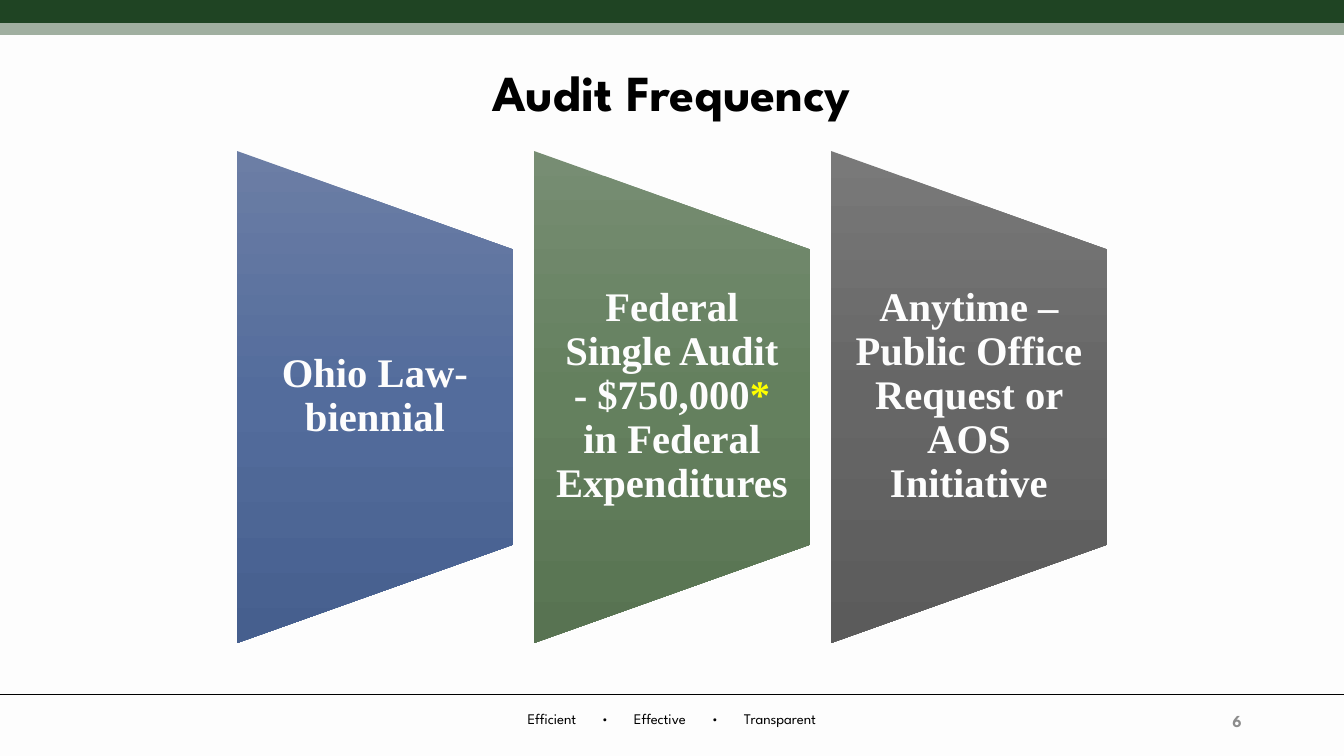
from dataclasses import dataclass

from lxml import etree
from pptx import Presentation
from pptx import util as u
from pptx.dml.color import RGBColor
from pptx.enum import shapes, text
from pptx.oxml import ns

EMU_PER_PX = 914400 / 100.8
W, H = 1344, 756
SANS, SERIF = "League Spartan", "Times New Roman"
BLACK, WHITE, YELLOW, GREY = "000000", "FDFDFD", "FFFF00", "8C8C8C"
FOOTER_TABS = (552, 605, 660, 715, 780)
PANEL_LEFT, PANEL_TOP, PANEL_W, PANEL_H, PANEL_STEP = 237, 151, 276, 492, 297
LABEL_TOP, LABEL_H, LABEL_INSET = 249, 295, 20


@dataclass(frozen=True)
class Run:
    words: str
    color: str = WHITE


@dataclass(frozen=True)
class Panel:
    stops: tuple[str, str, str]
    runs: tuple[Run, ...]


@dataclass(frozen=True)
class Rule:
    y: int
    color: str
    width: float


RULES = (
    Rule(10, "1F4423", 18),
    Rule(29, "A0AFA0", 9),
    Rule(694, BLACK, 0.5),
)
PANELS = (
    Panel(("6C7EA5", "536C9C", "465F8E"), (Run("Ohio Law- biennial"),)),
    Panel(
        ("778D73", "64805E", "587352"),
        (
            Run("Federal Single Audit - $750,000"),
            Run("*", YELLOW),
            Run(" in Federal Expenditures"),
        ),
    ),
    Panel(
        ("797979", "666666", "5B5B5B"),
        (Run("Anytime – Public Office Request or AOS Initiative"),),
    ),
)


def px(n: float) -> int:
    return round(n * EMU_PER_PX)


def rgb(color: str) -> RGBColor:
    return RGBColor.from_string(color)


def box(x: int, y: int, w: int, h: int) -> tuple[int, int, int, int]:
    return px(x), px(y), px(w), px(h)


def add_run(p, run: Run, size: float, font: str, bold: bool = True) -> None:
    r = p.add_run()
    r.text = run.words
    r.font.size, r.font.name, r.font.bold = u.Pt(size), font, bold
    r.font.color.rgb = rgb(run.color)


def set_frame(tf, inset: int, anchor) -> None:
    tf.word_wrap = True
    tf.auto_size = text.MSO_AUTO_SIZE.NONE
    tf.vertical_anchor = anchor
    tf.margin_left = tf.margin_right = px(inset)
    tf.margin_top = tf.margin_bottom = 0


def add_text(s, at: tuple[int, int, int, int], align, inset: int = 0):
    tf = s.shapes.add_textbox(*box(*at)).text_frame
    set_frame(tf, inset, text.MSO_ANCHOR.MIDDLE)
    p = tf.paragraphs[0]
    p.alignment = align
    return p


def add_rule(s, rule: Rule) -> None:
    y = px(rule.y)
    cx = s.shapes.add_connector(shapes.MSO_CONNECTOR.STRAIGHT, 0, y, px(W), y)
    cx.line.color.rgb = rgb(rule.color)
    cx.line.width = u.Pt(rule.width)
    etree.SubElement(cx._element.spPr, ns.qn("a:effectLst"))


def fill_gradient(sp, stops: tuple[str, str, str]) -> None:
    sp.fill.gradient()
    grad = sp._element.spPr.find(ns.qn("a:gradFill"))
    grad.set("rotWithShape", "0")
    for child in list(grad):
        grad.remove(child)
    gs_list = etree.SubElement(grad, ns.qn("a:gsLst"))
    for i, color in enumerate(stops):
        gs = etree.SubElement(gs_list, ns.qn("a:gs"), pos=str(i * 50000))
        etree.SubElement(gs, ns.qn("a:srgbClr"), val=color)
    etree.SubElement(grad, ns.qn("a:lin"), ang="5400000", scaled="0")


def add_panel(s, index: int, panel: Panel) -> None:
    left = PANEL_LEFT + index * PANEL_STEP
    shift = (PANEL_H - PANEL_W) // 2
    sp = s.shapes.add_shape(
        shapes.MSO_SHAPE.FLOWCHART_MANUAL_OPERATION,
        *box(left - shift, PANEL_TOP + shift, PANEL_H, PANEL_W),
    )
    sp.rotation = 270
    sp.shadow.inherit = False
    sp.line.fill.background()
    fill_gradient(sp, panel.stops)
    at = (left, LABEL_TOP, PANEL_W, LABEL_H)
    p = add_text(s, at, text.PP_ALIGN.CENTER, LABEL_INSET)
    p.line_spacing = 0.9
    for run in panel.runs:
        add_run(p, run, 29, SERIF)


def add_title(s) -> None:
    sp = s.shapes.title
    sp.left, sp.top, sp.width, sp.height = box(92, 40, 1159, 111)
    set_frame(sp.text_frame, 10, text.MSO_ANCHOR.MIDDLE)
    p = sp.text_frame.paragraphs[0]
    p.alignment = text.PP_ALIGN.CENTER
    p.line_spacing = 0.9
    add_run(p, Run("Audit Frequency", BLACK), 36, SANS)


def add_footer(s) -> None:
    p = add_text(s, (0, 705, W, 28), text.PP_ALIGN.LEFT)
    tabs = etree.SubElement(p._p.get_or_add_pPr(), ns.qn("a:tabLst"))
    for x in FOOTER_TABS:
        etree.SubElement(tabs, ns.qn("a:tab"), pos=str(px(x)), algn="ctr")
    for word in ("Efficient", "•", "Effective", "•", "Transparent"):
        add_run(p, Run("\t" + word, BLACK), 10.5, SANS, False)
    p = add_text(s, (950, 701, 302, 40), text.PP_ALIGN.RIGHT, 10)
    add_run(p, Run("6", GREY), 12, SANS)


def main() -> None:
    prs = Presentation()
    prs.slide_width, prs.slide_height = px(W), px(H)
    s = prs.slides.add_slide(prs.slide_layouts[5])
    s.background.fill.solid()
    s.background.fill.fore_color.rgb = rgb(WHITE)
    for rule in RULES:
        add_rule(s, rule)
    add_title(s)
    for index, panel in enumerate(PANELS):
        add_panel(s, index, panel)
    add_footer(s)
    prs.save("out.pptx")


if __name__ == "__main__":
    main()
